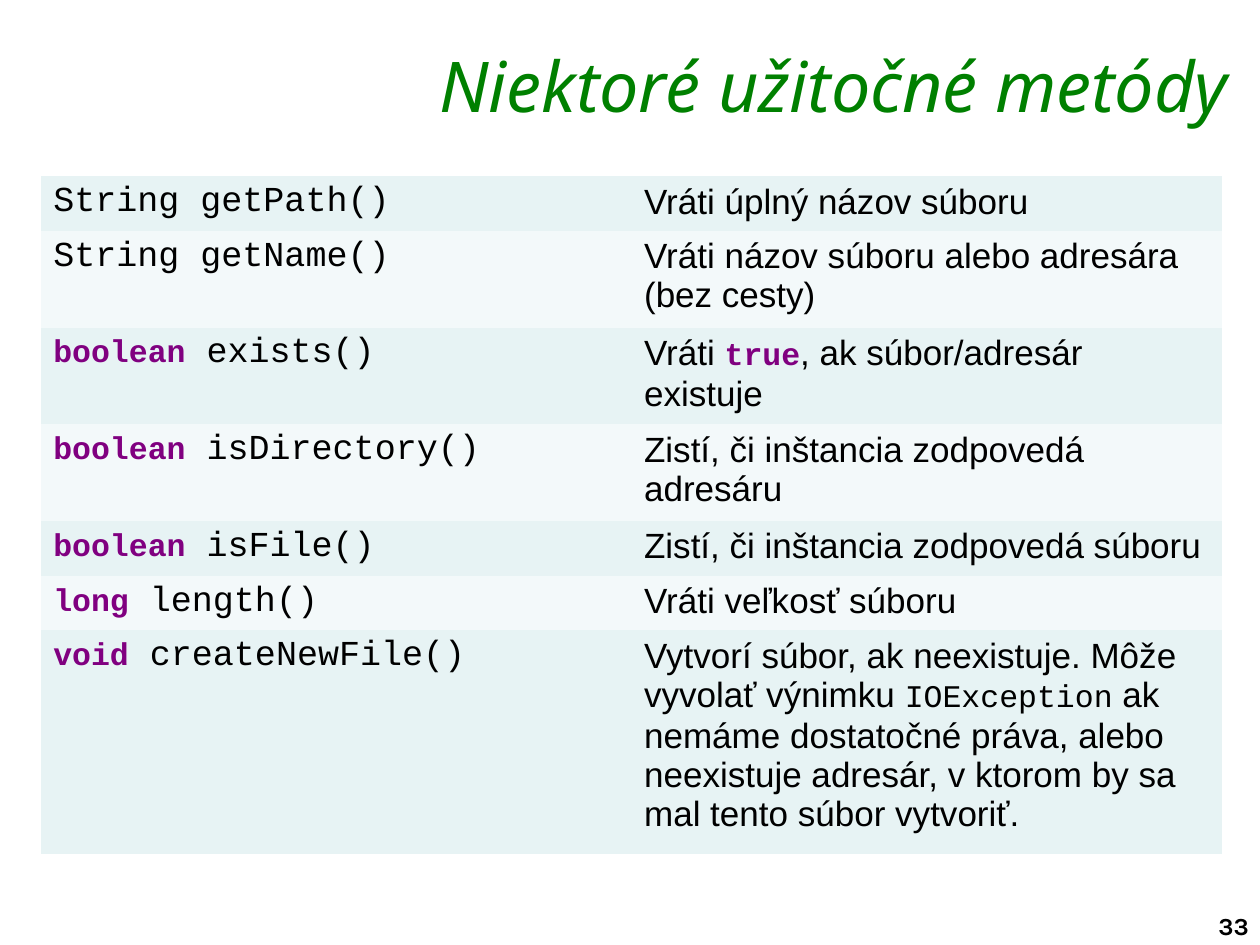
from pptx import Presentation
from pptx.dml.color import RGBColor
from pptx.enum.text import MSO_ANCHOR, MSO_AUTO_SIZE, PP_ALIGN
from pptx.util import Cm, Pt

GREEN = RGBColor(0x00, 0x80, 0x00)
PURPLE = RGBColor(0x80, 0x00, 0x80)
BLACK = RGBColor(0x00, 0x00, 0x00)
BANDS = (RGBColor(0xE7, 0xF3, 0xF4), RGBColor(0xF3, 0xF9, 0xFA))
NO_STYLE = "{2D5ABB26-0587-4C30-8999-92F81FD0307C}"

# Text styles: font, size, colour, bold, italic
HEADING = ("Noto Sans", 40, GREEN, False, True)
BODY = ("Arial", 20, BLACK, False, False)
SIGNATURE = ("Courier New", 20, BLACK, False, False)
KEYWORD = ("Courier New", 18, PURPLE, True, False)
INLINE_CODE = ("Courier New", 18, BLACK, False, False)
NUMBER = ("Karla", 14, BLACK, True, False)

TITLE = "Niektoré užitočné metódy"
PAGE = "33"

# Return type, method, description pieces, lines in the description
METHODS = [
    (("String", SIGNATURE), "getPath()",
     [("Vráti úplný názov súboru", BODY)], 1),
    (("String", SIGNATURE), "getName()",
     [("Vráti názov súboru alebo adresára (bez cesty)", BODY)], 2),
    (("boolean", KEYWORD), "exists()",
     [("Vráti ", BODY), ("true", KEYWORD),
      (", ak súbor/adresár existuje", BODY)], 2),
    (("boolean", KEYWORD), "isDirectory()",
     [("Zistí, či inštancia zodpovedá adresáru", BODY)], 2),
    (("boolean", KEYWORD), "isFile()",
     [("Zistí, či inštancia zodpovedá súboru", BODY)], 1),
    (("long", KEYWORD), "length()",
     [("Vráti veľkosť súboru", BODY)], 1),
    (("void", KEYWORD), "createNewFile()",
     [("Vytvorí súbor, ak neexistuje. Môže vyvolať výnimku ", BODY),
      ("IOException", INLINE_CODE),
      (" ak nemáme dostatočné práva, alebo neexistuje adresár, "
       "v ktorom by sa mal tento súbor vytvoriť.", BODY)], 5),
]

ROW_BASE, LINE_HEIGHT = 0.25, 0.85
COLUMN_WIDTH = Cm(11.91)


def write(paragraph, pieces):
    """Add each (text, style) piece to the paragraph as a run."""
    for text, (name, size, color, bold, italic) in pieces:
        run = paragraph.add_run()
        run.text = text
        font = run.font
        font.name, font.size = name, Pt(size)
        font.bold, font.italic = bold, italic
        font.color.rgb = color


def add_title(slide):
    title = slide.shapes.title
    title.left, title.top = Cm(5.82), Cm(0.79)
    title.width, title.height = Cm(19.18), Cm(1.47)
    frame = title.text_frame
    frame.auto_size = MSO_AUTO_SIZE.NONE
    frame.vertical_anchor = MSO_ANCHOR.TOP
    frame.margin_top = Cm(0.07)
    heading = frame.paragraphs[0]
    heading.alignment = PP_ALIGN.RIGHT
    heading.line_spacing = 1.0
    write(heading, [(TITLE, HEADING)])


def add_method_table(slide):
    heights = [Cm(ROW_BASE + LINE_HEIGHT * lines) for *_, lines in METHODS]
    frame = slide.shapes.add_table(len(METHODS), 2, Cm(0.82), Cm(3.55),
                                   2 * COLUMN_WIDTH, sum(heights))
    table = frame.table
    table.first_row = table.horz_banding = False
    table._tbl.tblPr.find("{*}tableStyleId").text = NO_STYLE
    for index, (row, height, method) in enumerate(zip(table.rows, heights, METHODS)):
        row.height = height
        return_type, name, description, _ = method
        signature = [return_type, (" " + name, SIGNATURE)]
        for cell, pieces in zip(row.cells, (signature, description)):
            cell.fill.solid()
            cell.fill.fore_color.rgb = BANDS[index % 2]
            write(cell.text_frame.paragraphs[0], pieces)


def add_page_number(slide):
    box = slide.shapes.add_textbox(Cm(24.31), Cm(18.24), Cm(1.3), Cm(0.84))
    box.text_frame.word_wrap = True
    write(box.text_frame.paragraphs[0], [(PAGE, NUMBER)])


def main():
    deck = Presentation()
    deck.slide_width, deck.slide_height = Cm(25.4), Cm(19.05)
    slide = deck.slides.add_slide(deck.slide_layouts[5])
    add_page_number(slide)
    add_title(slide)
    add_method_table(slide)
    deck.save("out.pptx")


if __name__ == "__main__":
    main()
